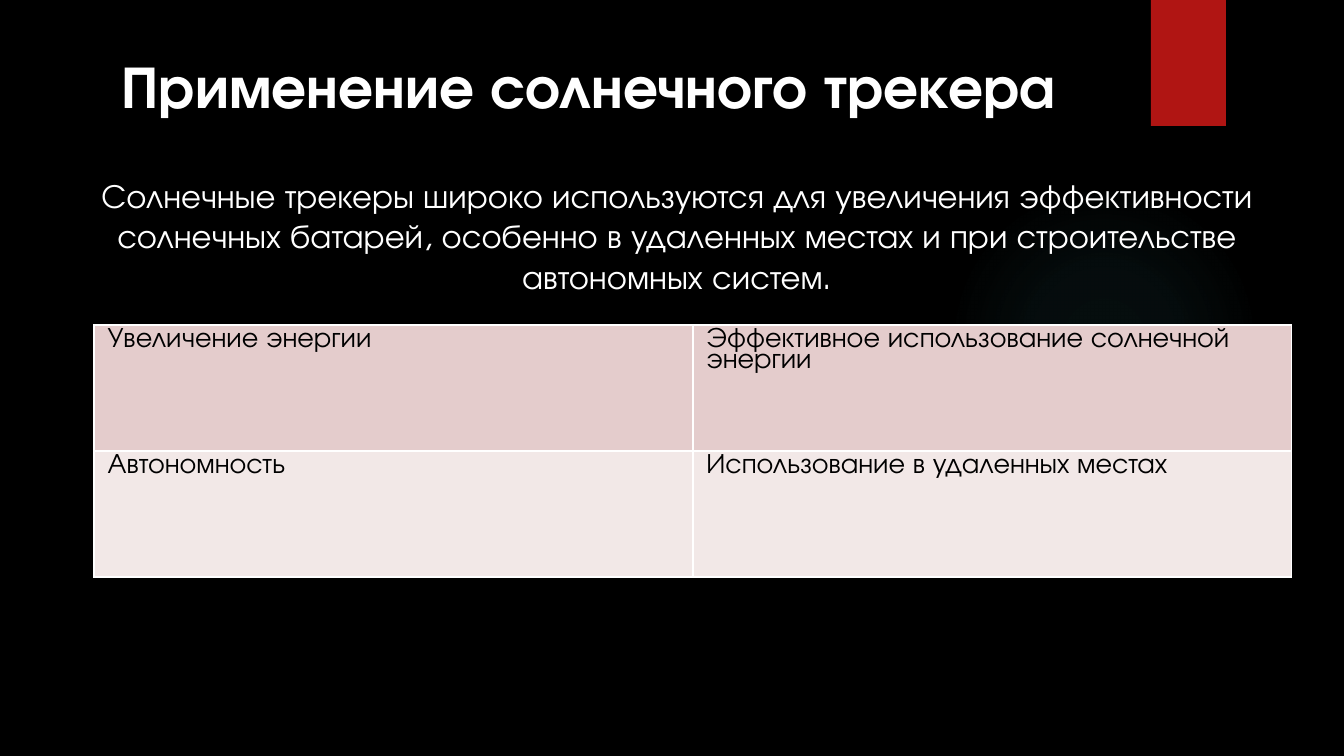
from lxml import etree
from pptx import Presentation
from pptx.dml.color import RGBColor
from pptx.enum.shapes import MSO_SHAPE as Shape
from pptx.enum.text import PP_ALIGN as Align
from pptx.oxml import parse_xml
from pptx.oxml.ns import nsdecls, qn
from pptx.util import Cm, Pt

FONT = "TeX Gyre Adventor"
COLORS = {
    "background": "000000",
    "light": "FFFFFF",
    "dark": "000000",
    "ribbon": "B01513",
    "glow": "50B9C1",
    "row_odd": "E4CCCC",
    "row_even": "F2E8E7",
}


def rgb(name):
    return RGBColor.from_string(COLORS[name])


def write_text(frame, text, *, size, color="light", bold=False,
               align=Align.LEFT, spacing=1.0):
    frame.word_wrap = True
    paragraph = frame.paragraphs[0]
    paragraph.alignment = align
    paragraph.line_spacing = spacing
    run = paragraph.add_run()
    run.text = text
    run.font.name = FONT
    run.font.size = Pt(size)
    run.font.bold = bold
    run.font.color.rgb = rgb(color)


class SlideBuilder:
    def __init__(self, slide):
        self.slide = slide
        fill = slide.background.fill
        fill.solid()
        fill.fore_color.rgb = rgb("background")

    def block(self, kind, left, top, width, height, color):
        shape = self.slide.shapes.add_shape(
            kind, Cm(left), Cm(top), Cm(width), Cm(height))
        shape.shadow.inherit = False
        shape.line.fill.background()
        shape.fill.solid()
        shape.fill.fore_color.rgb = rgb(color)
        return shape

    def glow(self, left, top, size, color, stops):
        shape = self.block(Shape.OVAL, left, top, size, size, color)
        stop_xml = "".join(
            f'<a:gs pos="{position * 1000}"><a:srgbClr val="{COLORS[color]}">'
            f'<a:alpha val="{alpha * 1000}"/></a:srgbClr></a:gs>'
            for position, alpha in stops)
        gradient = parse_xml(
            f'<a:gradFill {nsdecls("a")} rotWithShape="1">'
            f'<a:gsLst>{stop_xml}</a:gsLst><a:path path="circle">'
            '<a:fillToRect l="50000" t="50000" r="50000" b="50000"/>'
            '</a:path></a:gradFill>')
        properties = shape._element.spPr
        properties.replace(properties.find(qn("a:solidFill")), gradient)

    def text(self, left, top, width, height, text, **style):
        box = self.slide.shapes.add_textbox(
            Cm(left), Cm(top), Cm(width), Cm(height))
        write_text(box.text_frame, text, **style)

    def table(self, left, top, width, height, rows, fills, **style):
        table = self.slide.shapes.add_table(
            len(rows), len(rows[0]),
            Cm(left), Cm(top), Cm(width), Cm(height)).table
        for row_index, row in enumerate(rows):
            for column_index, text in enumerate(row):
                cell = table.cell(row_index, column_index)
                write_text(cell.text_frame, text, **style)
                self.border(cell, "light", 1)
                cell.fill.solid()
                cell.fill.fore_color.rgb = rgb(fills[row_index])

    def border(self, cell, color, width):
        properties = cell._tc.get_or_add_tcPr()
        for side in ("lnL", "lnR", "lnT", "lnB"):
            line = etree.SubElement(properties, qn(f"a:{side}"), w=str(Pt(width)))
            fill = etree.SubElement(line, qn("a:solidFill"))
            etree.SubElement(fill, qn("a:srgbClr"), val=COLORS[color])


def main():
    presentation = Presentation()
    presentation.slide_width = Cm(25.4)
    presentation.slide_height = Cm(14.29)
    builder = SlideBuilder(
        presentation.slides.add_slide(presentation.slide_layouts[6]))

    # Backdrop: soft glow and red ribbon
    builder.glow(17.93, 3.5, 5.87, "glow", [(0, 7), (36, 6), (69, 0)])
    builder.block(Shape.RECTANGLE, 21.75, 0, 1.42, 2.38, "ribbon")

    # Title and introduction
    builder.text(0.58, 0.79, 21.1, 1.62, "Применение солнечного трекера",
                 size=32, bold=True, align=Align.CENTER)
    builder.text(1.4, 3.18, 22.8, 2.57,
                 "Солнечные трекеры широко используются для увеличения "
                 "эффективности солнечных батарей, особенно в удаленных "
                 "местах и при строительстве автономных систем.",
                 size=18, align=Align.CENTER)

    # Table of benefits
    rows = [
        ("Увеличение энергии", "Эффективное использование солнечной энергии"),
        ("Автономность", "Использование в удаленных местах"),
    ]
    builder.table(1.78, 6.14, 22.63, 4.77, rows, ("row_odd", "row_even"),
                  size=15, color="dark", spacing=0.78)

    presentation.save("out.pptx")


if __name__ == "__main__":
    main()
